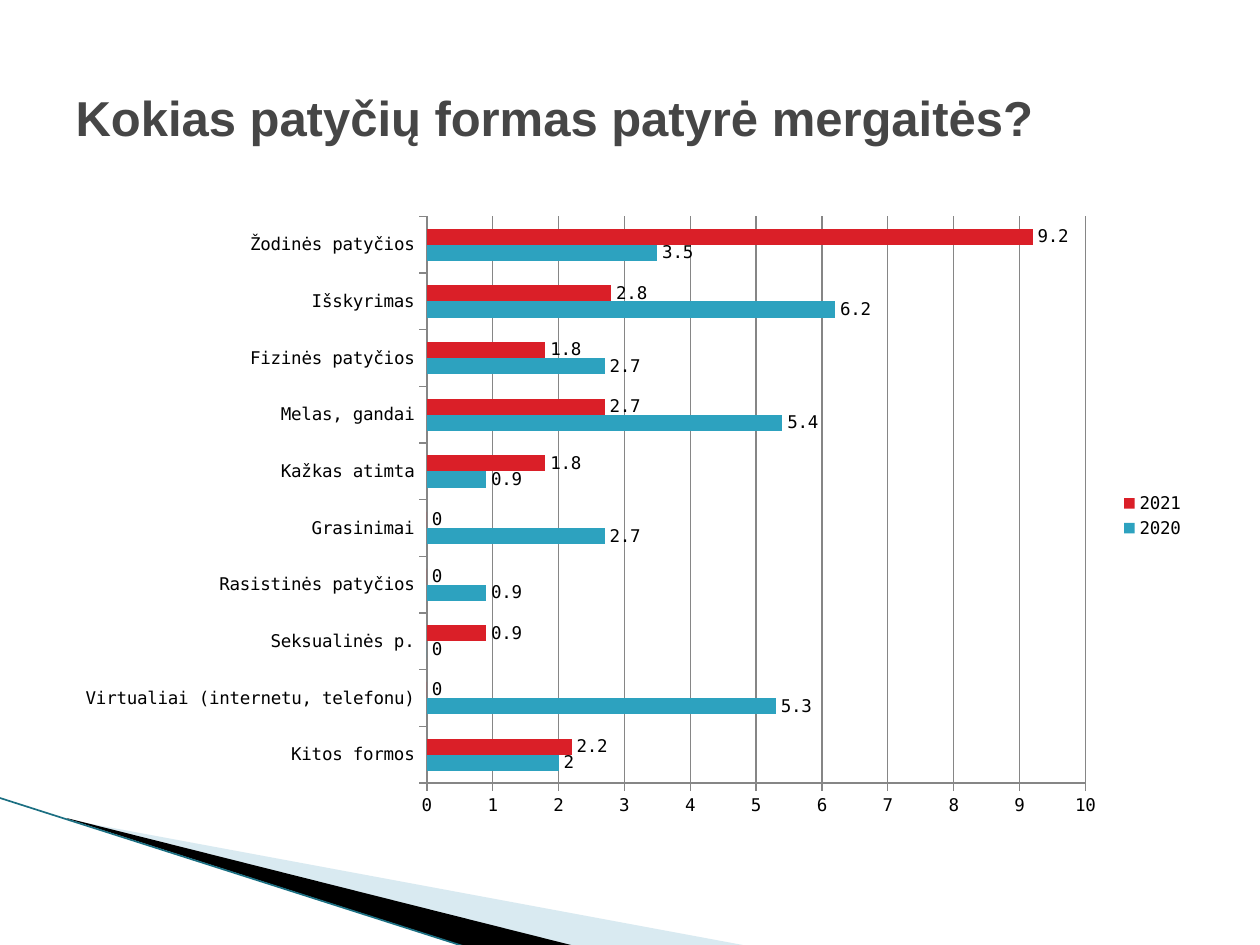
from pptx import Presentation
from pptx.chart.data import CategoryChartData as Data
from pptx.dml.color import RGBColor as RGB
from pptx.enum.chart import XL_CHART_TYPE as Kind, XL_LABEL_POSITION as Spot
from pptx.enum.chart import XL_LEGEND_POSITION as Side, XL_TICK_MARK as Tick
from pptx.enum.shapes import MSO_CONNECTOR as Link
from pptx.enum.text import MSO_ANCHOR as Anchor, PP_ALIGN as Align
from pptx.oxml.ns import qn
from pptx.util import Pt
from lxml.etree import SubElement

BLACK = RGB(0x00, 0x00, 0x00)
GRAY = RGB(0x46, 0x46, 0x46)
GRID = RGB(0x86, 0x86, 0x86)
PALE = RGB(0xA0, 0xCB, 0xDC)
TEAL = RGB(0x1B, 0x6F, 0x82)
BLUE = RGB(0x2D, 0xA2, 0xBF)
RED = RGB(0xDA, 0x1F, 0x28)

FORMS = [
    ("Kitos formos", 2, 2.2),
    ("Virtualiai (internetu, telefonu)", 5.3, 0),
    ("Seksualinės p.", 0, 0.9),
    ("Rasistinės patyčios", 0.9, 0),
    ("Grasinimai", 2.7, 0),
    ("Kažkas atimta", 0.9, 1.8),
    ("Melas, gandai", 5.4, 2.7),
    ("Fizinės patyčios", 2.7, 1.8),
    ("Išskyrimas", 6.2, 2.8),
    ("Žodinės patyčios", 3.5, 9.2),
]


class Page:
    """Holds the style and the current slide, and draws each kind of element."""

    def __init__(self, slide):
        self.slide = slide
        self.shapes = slide.shapes
        self.head = "Arial"
        self.body = "DejaVu Sans Mono"

    def title(self, text, x, y, w, h):
        box = self.shapes.title
        box.left, box.top, box.width, box.height = Pt(x), Pt(y), Pt(w), Pt(h)
        frame = box.text_frame
        frame.text = text
        frame.word_wrap = True
        frame.vertical_anchor = Anchor.MIDDLE
        para = frame.paragraphs[0]
        para.alignment = Align.LEFT
        font = para.font
        font.name, font.size, font.bold = self.head, Pt(28), True
        font.color.rgb = GRAY

    def wedge(self, points, color, alpha=None):
        first, *rest = [(Pt(x), Pt(y)) for x, y in points]
        pen = self.shapes.build_freeform(*first)
        pen.add_line_segments(rest)
        shape = pen.convert_to_shape()
        shape.shadow.inherit = False
        shape.fill.solid()
        shape.fill.fore_color.rgb = color
        shape.line.fill.background()
        if alpha:
            tone = shape._element.spPr.find(qn("a:solidFill"))[0]
            SubElement(tone, qn("a:alpha")).set("val", str(alpha * 1000))

    def line(self, x1, y1, x2, y2, color, width):
        line = self.shapes.add_connector(Link.STRAIGHT, Pt(x1), Pt(y1), Pt(x2), Pt(y2))
        line.line.color.rgb = color
        line.line.width = Pt(width)
        SubElement(line._element.spPr, qn("a:effectLst"))

    def bars(self, rows, series, x, y, w, h):
        names, *values = zip(*rows)
        data = Data()
        data.categories = names
        for (name, _), vals in zip(series, values):
            data.add_series(name, vals)
        frame = self.shapes.add_chart(Kind.BAR_CLUSTERED, Pt(x), Pt(y), Pt(w), Pt(h), data)
        chart = frame.chart
        chart.has_title = False
        chart.font.name, chart.font.size = self.body, Pt(10)
        chart.font.color.rgb = BLACK
        chart.has_legend = True
        chart.legend.position = Side.RIGHT
        chart.legend.include_in_layout = False
        for axis in (chart.category_axis, chart.value_axis):
            axis.major_tick_mark = Tick.OUTSIDE
            axis.minor_tick_mark = Tick.NONE
            axis.format.line.color.rgb = GRID
        chart.category_axis.has_major_gridlines = False
        grid = chart.value_axis.major_gridlines
        grid.format.line.color.rgb = GRID
        plot = chart.plots[0]
        plot.gap_width, plot.overlap = 150, 0
        plot.vary_by_categories = False
        for bar, (_, color) in zip(plot.series, series):
            bar.invert_if_negative = False
            bar.format.fill.solid()
            bar.format.fill.fore_color.rgb = color
            tags = bar.data_labels
            tags.show_value = True
            tags.position = Spot.OUTSIDE_END


def main():
    deck = Presentation()
    deck.slide_width, deck.slide_height = Pt(720), Pt(540)
    page = Page(deck.slides.add_slide(deck.slide_layouts[5]))
    page.wedge([(39.6, 468.5), (428.4, 540.7), (328.3, 540.7), (39.6, 468)], PALE, 40)
    page.wedge([(38.2, 467.5), (329, 540.7), (267.8, 541.4), (38.9, 468)], BLACK)
    page.line(-0.7, 455.8, 267.1, 541.4, TEAL, 0.95)
    page.bars(FORMS, [("2020", BLUE), ("2021", RED)], 36, 116.6, 648, 356.4)
    page.title("Kokias patyčių formas patyrė mergaitės?", 36, 21.6, 648, 90)
    deck.save("out.pptx")


if __name__ == "__main__":
    main()
